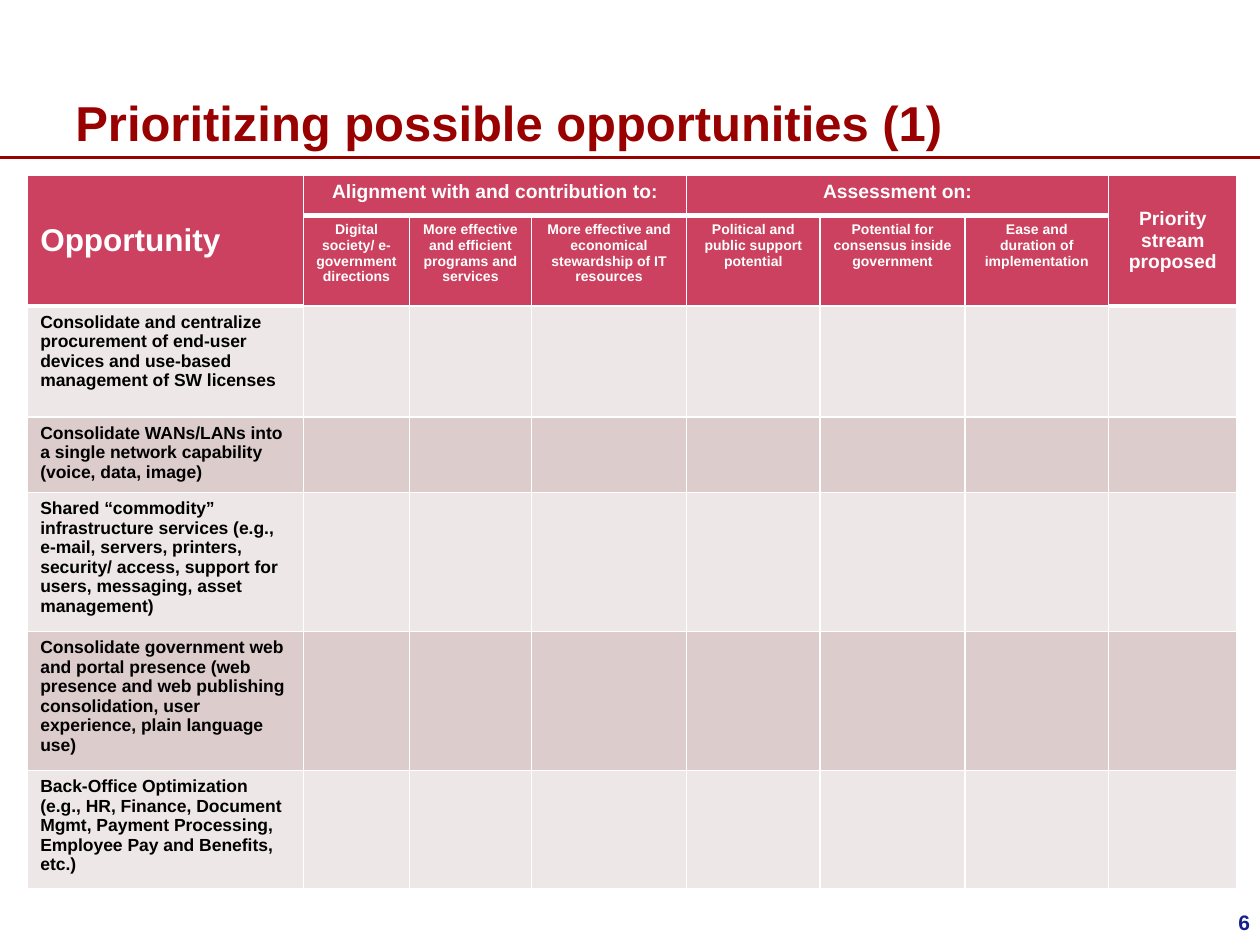
from lxml import etree
from pptx import Presentation
from pptx import util as u
from pptx.dml.color import RGBColor
from pptx.enum import shapes, text
from pptx.oxml import ns

RED = RGBColor(0x99, 0x00, 0x00)
ROSE = RGBColor(0xCB, 0x41, 0x5F)
PALE = RGBColor(0xEE, 0xE7, 0xE7)
DUSK = RGBColor(0xDC, 0xCC, 0xCC)
NAVY = RGBColor(0x16, 0x21, 0x8E)
BLACK = RGBColor(0, 0, 0)
WHITE = RGBColor(0xFF, 0xFF, 0xFF)
LEFT, MID = text.PP_ALIGN.LEFT, text.PP_ALIGN.CENTER

COLS = [2.19, 0.84, 0.97, 1.23, 1.06, 1.15, 1.14, 1.02]
ROWS = [0.32, 0.72, 0.88, 0.56, 1.03, 1.03, 0.87]
SPANS = [(0, 0, 1, 0), (0, 1, 0, 3), (0, 4, 0, 6), (0, 7, 1, 7)]
GROUPS = [
    (0, "Opportunity", 18, LEFT),
    (1, "Alignment with and contribution to:", 11, MID),
    (4, "Assessment on:", 11, MID),
    (7, "Priority stream proposed", 11, MID),
]
HEADS = [
    "Digital society/ e-government directions",
    "More effective and efficient programs and services",
    "More effective and economical stewardship of IT resources",
    "Political and public support potential",
    "Potential for consensus inside government",
    "Ease and duration of implementation",
]
ITEMS = [
    "Consolidate and centralize procurement of end-user devices and use-based "
    "management of SW licenses",
    "Consolidate WANs/LANs into a single network capability (voice, data, image)",
    "Shared “commodity” infrastructure services (e.g., e-mail, servers, printers, "
    "security/ access, support for users, messaging, asset management)",
    "Consolidate government web and portal presence (web presence and web "
    "publishing consolidation, user experience, plain language use)",
    "Back-Office Optimization (e.g., HR, Finance, Document Mgmt, Payment "
    "Processing, Employee Pay and Benefits, etc.)",
]


def write(frame, words, size, color, align=LEFT):
    """Write one bold run into the first paragraph of a frame."""
    para = frame.paragraphs[0]
    para.alignment = align
    run = para.add_run()
    run.text = words
    run.font.name = "Arial"
    run.font.size = u.Pt(size)
    run.font.bold = True
    run.font.color.rgb = color


def add_text(slide, box, words, size, color, align, anchor):
    """Place a wrapped text box."""
    frame = slide.shapes.add_textbox(*map(u.Inches, box)).text_frame
    frame.word_wrap = True
    frame.vertical_anchor = anchor
    write(frame, words, size, color, align)


def add_rule(slide, left, top, width):
    """Draw the red rule below the title."""
    ends = map(u.Inches, (left, top, left + width, top))
    rule = slide.shapes.add_connector(shapes.MSO_CONNECTOR.STRAIGHT, *ends)
    rule.line.color.rgb = RED
    rule.line.width = u.Pt(2.25)
    etree.SubElement(rule._element.spPr, ns.qn("a:effectLst"))


def heavy(row, col):
    """Tell whether the edge below a cell is a thick one."""
    return row == 0 or (row == 1 and col in (0, 7))


def edge(cell, row, col):
    """Give a cell its white borders."""
    props = cell._tc.get_or_add_tcPr()
    sides = {"L": 1, "R": 1, "T": 3 if heavy(row - 1, col) else 1,
             "B": 3 if heavy(row, col) else 1}
    for spot, (side, width) in enumerate(sides.items()):
        line = etree.Element(ns.qn("a:ln" + side), w=str(u.Pt(width)))
        fill = etree.SubElement(line, ns.qn("a:solidFill"))
        etree.SubElement(fill, ns.qn("a:srgbClr"), val=str(WHITE))
        props.insert(spot, line)


def add_grid(slide, left, top):
    """Build the table of opportunities and criteria."""
    place = map(u.Inches, (left, top, sum(COLS), sum(ROWS)))
    grid = slide.shapes.add_table(len(ROWS), len(COLS), *place).table
    for col, width in zip(grid.columns, COLS):
        col.width = u.Inches(width)
    for row, high in zip(grid.rows, ROWS):
        row.height = u.Inches(high)
    for r in range(len(ROWS)):
        for c in range(len(COLS)):
            cell = grid.cell(r, c)
            cell.fill.solid()
            cell.fill.fore_color.rgb = ROSE if r < 2 else (PALE, DUSK)[r % 2]
            cell.text_frame.paragraphs[0].font.size = u.Pt(10)
            edge(cell, r, c)
    for r, c, last, end in SPANS:
        grid.cell(r, c).merge(grid.cell(last, end))
    for c, words, size, align in GROUPS:
        write(grid.cell(0, c).text_frame, words, size, WHITE, align)
    for c in (0, 7):
        grid.cell(0, c).vertical_anchor = text.MSO_ANCHOR.MIDDLE
    for c, words in enumerate(HEADS, 1):
        write(grid.cell(1, c).text_frame, words, 8, WHITE, MID)
    for r, words in enumerate(ITEMS, 2):
        write(grid.cell(r, 0).text_frame, words, 10, BLACK)


def main():
    """Build and save the slide."""
    deck = Presentation()
    deck.slide_width, deck.slide_height = u.Inches(10), u.Inches(7.5)
    slide = deck.slides.add_slide(deck.slide_layouts[6])
    add_rule(slide, 0, 1.25, 10)
    add_text(slide, (0.5, 0.08, 8.17, 1.17), "Prioritizing possible opportunities (1)",
             28, RED, LEFT, text.MSO_ANCHOR.BOTTOM)
    add_grid(slide, 0.22, 1.39)
    add_text(slide, (7.69, 7.17, 2.33, 0.33), "6", 12, NAVY,
             text.PP_ALIGN.RIGHT, text.MSO_ANCHOR.TOP)
    deck.save("out.pptx")


if __name__ == "__main__":
    main()
